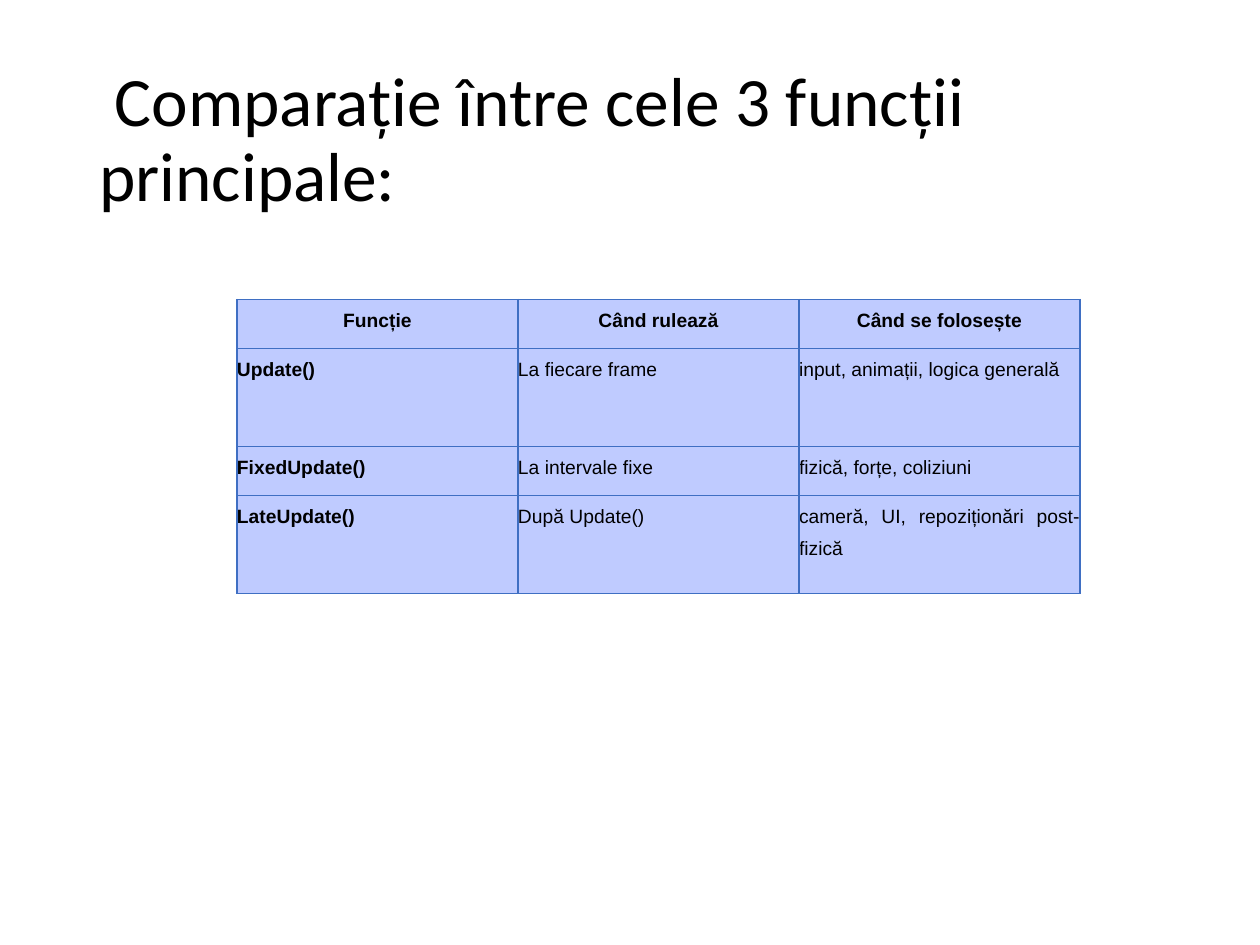
from dataclasses import dataclass

import pptx
import pptx.dml.color
import pptx.enum.text
import pptx.oxml
import pptx.oxml.ns
import pptx.util

Pt = pptx.util.Pt
Align = pptx.enum.text.PP_ALIGN
Anchor = pptx.enum.text.MSO_ANCHOR


@dataclass(frozen=True)
class Theme:
    ink: str = "000000"
    cell_fill: str = "BFCBFF"
    border: str = "3F6FC3"
    border_width: float = 0.75
    title_font: str = "Calibri"
    title_size: float = 39.6
    table_font: str = "Arial"
    table_size: float = 11


THEME = Theme()

TITLE = " Comparație între cele 3 funcții principale:"
HEADER = ("Funcție", "Când rulează", "Când se folosește")
FUNCTIONS = (
    ("Update()", "La fiecare frame", "input, animații, logica generală"),
    ("FixedUpdate()", "La intervale fixe", "fizică, forțe, coliziuni"),
    ("LateUpdate()", "După Update()", "cameră, UI, repoziționări post-fizică"),
)
COLUMN_WIDTH = 160.6
LINE_HEIGHT = 28
ROW_LINES = (1, 2, 1, 2)


def rgb(value):
    return pptx.dml.color.RGBColor.from_string(value)


def write_text(frame, text, *, font, size, align, spacing, bold=False, inset=(0, 0)):
    """Fill a text frame with one paragraph; inset is (horizontal, vertical)."""
    frame.word_wrap = True
    frame.margin_left = frame.margin_right = Pt(inset[0])
    frame.margin_top = frame.margin_bottom = Pt(inset[1])
    paragraph = frame.paragraphs[0]
    paragraph.alignment = align
    paragraph.line_spacing = spacing
    run = paragraph.add_run()
    run.text = text
    run.font.name = font
    run.font.size = Pt(size)
    run.font.bold = bold
    run.font.color.rgb = rgb(THEME.ink)


def add_title(slide):
    title = slide.shapes.title
    title.left, title.top = Pt(49.5), Pt(28.75)
    title.width, title.height = Pt(621), Pt(104.4)
    frame = title.text_frame
    frame.auto_size = pptx.enum.text.MSO_AUTO_SIZE.NONE
    frame.vertical_anchor = Anchor.MIDDLE
    write_text(frame, TITLE, font=THEME.title_font, size=THEME.title_size,
               align=Align.LEFT, spacing=0.9, inset=(7.2, 3.6))


def set_borders(cell):
    """Outline all four sides; the lines must come before the cell's fill."""
    properties = cell._tc.get_or_add_tcPr()
    for position, side in enumerate(("lnL", "lnR", "lnT", "lnB")):
        line = pptx.oxml.parse_xml(
            f'<a:{side} {pptx.oxml.ns.nsdecls("a")} w="{Pt(THEME.border_width)}">'
            f'<a:solidFill><a:srgbClr val="{THEME.border}"/></a:solidFill></a:{side}>'
        )
        properties.insert(position, line)


def format_cell(cell, text, align, bold):
    cell.vertical_anchor = Anchor.TOP
    cell.margin_left = cell.margin_right = cell.margin_top = cell.margin_bottom = 0
    cell.fill.solid()
    cell.fill.fore_color.rgb = rgb(THEME.cell_fill)
    set_borders(cell)
    write_text(cell.text_frame, text, font=THEME.table_font, size=THEME.table_size,
               align=align, spacing=1.5, bold=bold)


def add_comparison(slide):
    rows = (HEADER, *FUNCTIONS)
    table = slide.shapes.add_table(
        len(rows), len(HEADER), Pt(135.4), Pt(171.1),
        Pt(COLUMN_WIDTH * len(HEADER)), Pt(LINE_HEIGHT * sum(ROW_LINES)),
    ).table
    table.horz_banding = False
    for column in table.columns:
        column.width = Pt(COLUMN_WIDTH)
    for r, (entries, lines) in enumerate(zip(rows, ROW_LINES)):
        table.rows[r].height = Pt(LINE_HEIGHT * lines)
        align = Align.CENTER if r == 0 else Align.JUSTIFY
        for c, entry in enumerate(entries):
            format_cell(table.cell(r, c), entry, align, bold=r == 0 or c == 0)


def main():
    presentation = pptx.Presentation()
    presentation.slide_width, presentation.slide_height = Pt(720), Pt(540)
    slide = presentation.slides.add_slide(presentation.slide_layouts[5])
    add_title(slide)
    add_comparison(slide)
    presentation.save("out.pptx")


if __name__ == "__main__":
    main()
